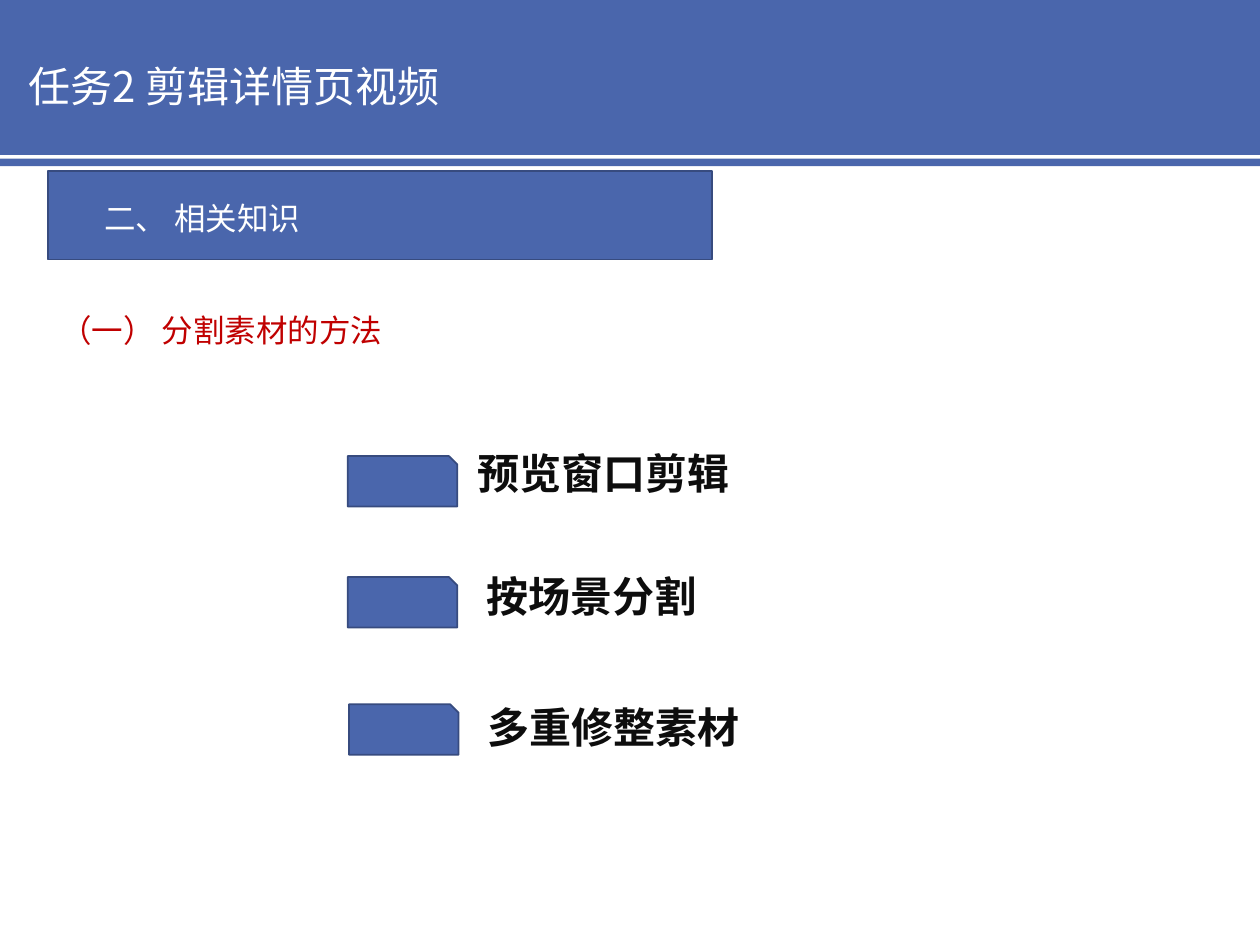
from pptx import Presentation
from pptx.dml.color import RGBColor
from pptx.enum.shapes import MSO_SHAPE
from pptx.enum.text import MSO_ANCHOR
from pptx.oxml.ns import qn
from pptx.util import Inches, Pt

COLORS = {
    "blue": "4A66AC",
    "edge": "374B7F",
    "white": "FFFFFF",
    "red": "C00000",
    "ink": "0D0D0D",
}
CJK_FONT = "Noto Sans CJK SC"
LABEL_FONT = "Arial Narrow"


class SlideBuilder:
    """Holds the style and the page being filled."""

    def __init__(self, page, colors):
        self.page = page
        self.colors = colors

    def color(self, name):
        return RGBColor.from_string(self.colors[name])

    def block(self, left, top, width, height, kind=MSO_SHAPE.RECTANGLE, edge=None):
        shape = self.page.shapes.add_shape(
            kind, Inches(left), Inches(top), Inches(width), Inches(height))
        shape.shadow.inherit = False
        shape.fill.solid()
        shape.fill.fore_color.rgb = self.color("blue")
        if edge:
            shape.line.color.rgb = self.color(edge)
            shape.line.width = Pt(1)
        else:
            shape.line.fill.background()
        return shape

    def text(self, words, left, top, width, height, size, color,
             font=CJK_FONT, bold=False, anchor=MSO_ANCHOR.TOP, inset=True):
        box = self.page.shapes.add_textbox(
            Inches(left), Inches(top), Inches(width), Inches(height))
        frame = box.text_frame
        frame.word_wrap = True
        frame.vertical_anchor = anchor
        if not inset:
            frame.margin_left = frame.margin_right = 0
            frame.margin_top = frame.margin_bottom = 0
        span = frame.paragraphs[0].add_run()
        span.text = words
        span.font.size = Pt(size)
        span.font.bold = bold
        span.font.color.rgb = self.color(color)
        span.font.name = font
        # Chinese characters take the East Asian font
        east_asian = span.font._element.makeelement(qn("a:ea"), {"typeface": CJK_FONT})
        span.font._element.find(qn("a:latin")).addnext(east_asian)
        return box


def main():
    deck = Presentation()
    deck.slide_width, deck.slide_height = Inches(10), Inches(7.5)
    page = deck.slides.add_slide(deck.slide_layouts[6])
    builder = SlideBuilder(page, COLORS)

    # Title band with a thin rule below
    builder.block(0, 0, 10, 1.23)
    builder.block(0, 1.26, 10, 0.06)
    builder.text("任务2 剪辑详情页视频", 0.13, 0.24, 5.27, 0.88, 24, "white",
                 anchor=MSO_ANCHOR.MIDDLE)

    # Section banner and heading
    builder.block(0.38, 1.36, 5.27, 0.7, edge="edge")
    builder.text("二、 相关知识", 0.73, 1.53, 4.93, 0.51, 18, "white")
    builder.text("（一） 分割素材的方法", 0.38, 2.42, 4.04, 0.77, 18, "red")

    # Methods: label, its left, top and width, then the left and top of its tab
    methods = [
        ("预览窗口剪辑", 3.79, 3.55, 3.23, 2.76, 3.62),
        ("按场景分割", 3.86, 4.53, 3.24, 2.76, 4.58),
        ("多重修整素材", 3.87, 5.57, 3.86, 2.77, 5.59),
    ]
    for label, left, top, width, tab_left, tab_top in methods:
        builder.text(label, left, top, width, 0.4, 24, "ink", font=LABEL_FONT,
                     bold=True, anchor=MSO_ANCHOR.MIDDLE, inset=False)
        builder.block(tab_left, tab_top, 0.87, 0.4,
                      MSO_SHAPE.SNIP_1_RECTANGLE, edge="edge")

    deck.save("out.pptx")


if __name__ == "__main__":
    main()
